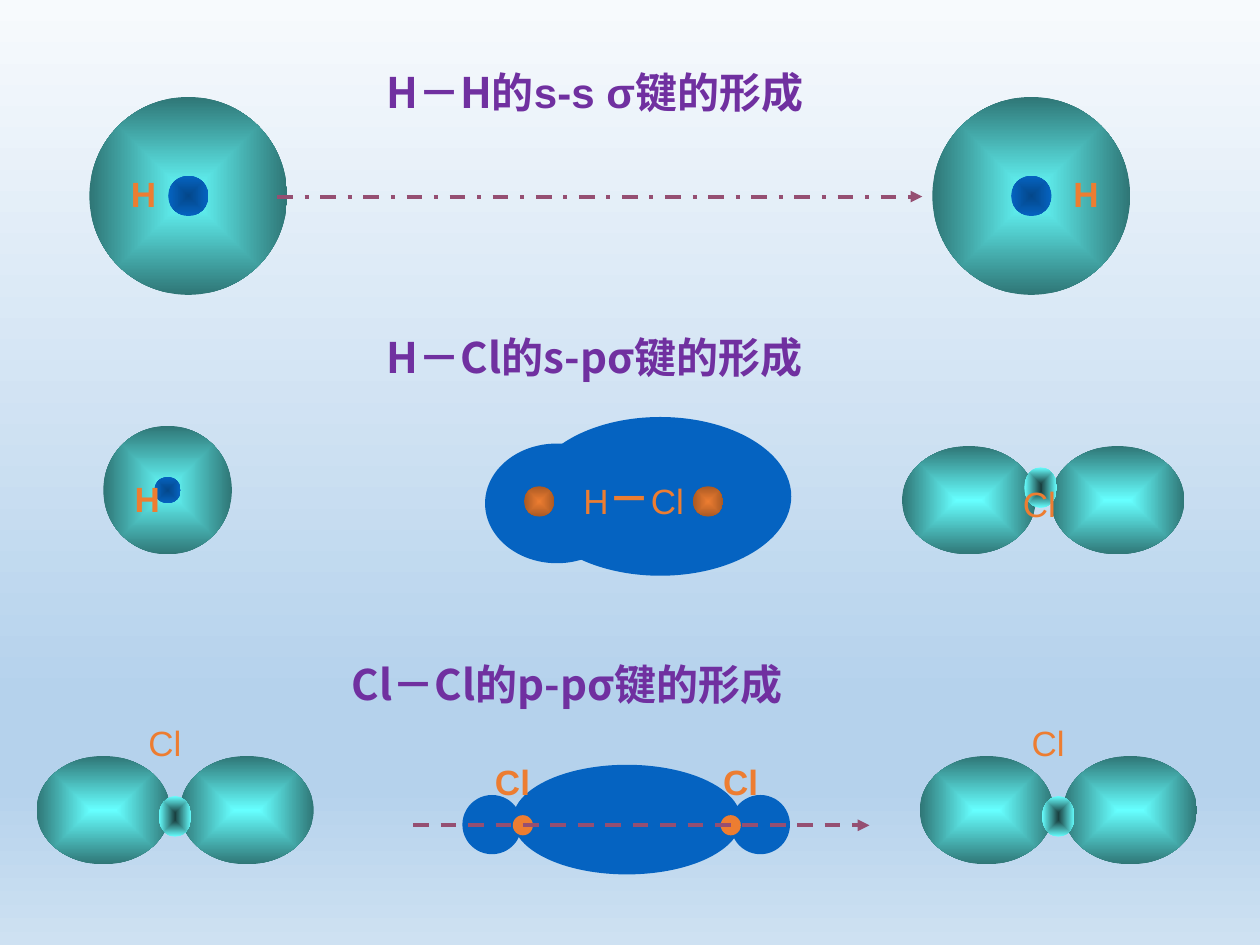
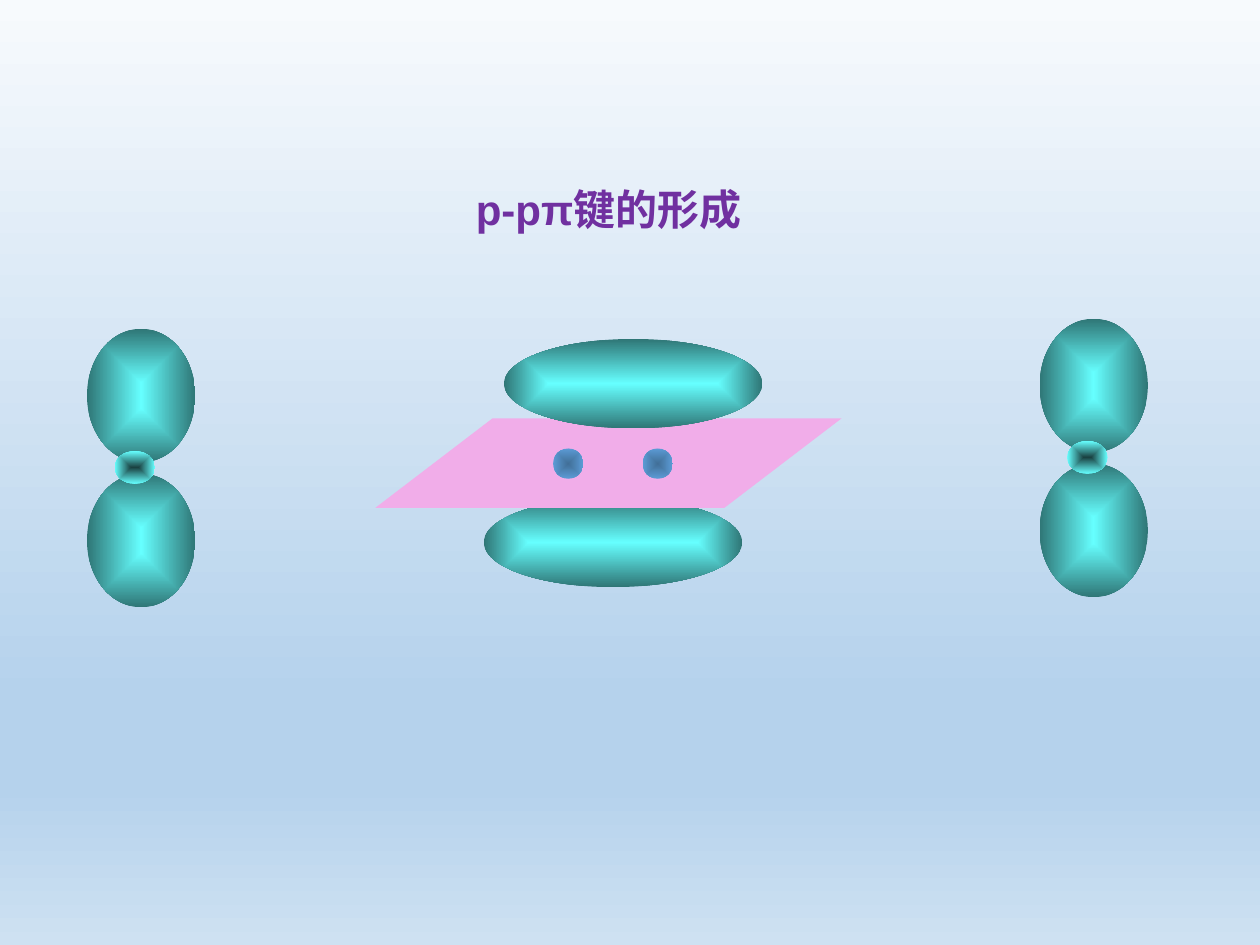
from dataclasses import dataclass
from typing import Any, Optional, Union

import lxml.etree
import pptx
import pptx.dml.color
import pptx.enum.dml
import pptx.enum.shapes
import pptx.enum.text
import pptx.oxml.ns
import pptx.util

Inches = pptx.util.Inches
Pt = pptx.util.Pt
qn = pptx.oxml.ns.qn
OVAL = pptx.enum.shapes.MSO_SHAPE.OVAL
DASH = pptx.enum.dml.MSO_LINE

# Shared colours and fonts
LATIN, CHINESE = "Arial", "Noto Sans CJK SC"
PURPLE, ORANGE, BLUE, PLUM, PINK = "7030A0", "ED7D31", "0563C1", "954F72", "F1ADE9"


@dataclass(frozen=True)
class Glow:
    """Gradient from the centre of a shape to its edge."""
    centre: str
    edge: str


CLOUD = Glow("66FFFF", "2F7676")
CORE = Glow("04478A", BLUE)
P_CORE = Glow("1A4141", "66FFFF")
HOT_CORE = Glow(ORANGE, "AA5923")
PALE_CORE = Glow("416F98", "5B9BD5")
SKY = [(0, "F7FAFD"), (74, "B5D2EC"), (83, "B5D2EC"), (100, "CEE1F2")]
Fill = Union[str, Glow]


@dataclass(frozen=True)
class Span:
    text: str
    font: str = LATIN
    size: int = 20
    bold: bool = False
    color: str = ORANGE


@dataclass(frozen=True)
class Label:
    text: str
    left: float
    top: float
    width: float = 0.53
    bold: bool = False


@dataclass(frozen=True)
class Ball:
    left: float
    top: float
    width: float
    height: float
    fill: Fill


@dataclass(frozen=True)
class SOrbital:
    left: float
    top: float
    size: float
    core: float
    label: Label


@dataclass(frozen=True)
class POrbital:
    left: float
    top: float
    lobe_step: float
    core_left: float
    core_top: float
    upright: bool = False
    label: Optional[Label] = None


@dataclass(frozen=True)
class Arrow:
    start: float
    end: float
    level: float
    dash: Any


def rgb(color: str) -> pptx.dml.color.RGBColor:
    return pptx.dml.color.RGBColor.from_string(color)


def set_stops(gradient: Any, stops: list[tuple[int, str]], angle: Optional[int] = None) -> None:
    """Rewrite a gradient: linear with an angle, otherwise spreading from the centre."""
    for child in list(gradient):
        gradient.remove(child)
    stop_list = lxml.etree.SubElement(gradient, qn("a:gsLst"))
    for position, color in stops:
        stop = lxml.etree.SubElement(stop_list, qn("a:gs"), pos=str(position * 1000))
        lxml.etree.SubElement(stop, qn("a:srgbClr"), val=color)
    if angle is not None:
        lxml.etree.SubElement(gradient, qn("a:lin"), ang=str(angle * 60000), scaled="0")
        return
    spread = lxml.etree.SubElement(gradient, qn("a:path"), {"path": "shape"})
    half = "50000"
    lxml.etree.SubElement(spread, qn("a:fillToRect"), l=half, t=half, r=half, b=half)


def add_figure(shapes: Any, ball: Ball, kind: Any = OVAL, turn: int = 0) -> Any:
    figure = shapes.add_shape(kind, Inches(ball.left), Inches(ball.top),
                              Inches(ball.width), Inches(ball.height))
    figure.rotation = turn
    figure.shadow.inherit = False
    figure.line.fill.background()
    if isinstance(ball.fill, Glow):
        figure.fill.gradient()
        set_stops(figure.element.spPr.find(qn("a:gradFill")),
                  [(0, ball.fill.centre), (100, ball.fill.edge)])
    else:
        figure.fill.solid()
        figure.fill.fore_color.rgb = rgb(ball.fill)
    return figure


def write(box: Any, spans: list[Span], centred: bool = False, side_inset: float = 0.1) -> None:
    frame = box.text_frame
    frame.word_wrap = True
    frame.auto_size = pptx.enum.text.MSO_AUTO_SIZE.NONE
    frame.vertical_anchor = pptx.enum.text.MSO_ANCHOR.TOP
    frame.margin_left = frame.margin_right = Inches(side_inset)
    frame.margin_top = frame.margin_bottom = Inches(0.05)
    para = frame.paragraphs[0]
    align = pptx.enum.text.PP_ALIGN
    para.alignment = align.CENTER if centred else align.LEFT
    for span in spans:
        run = para.add_run()
        run.text = span.text
        run.font.name = span.font
        run.font.size = Pt(span.size)
        run.font.bold = span.bold
        run.font.color.rgb = rgb(span.color)
        east_asian = lxml.etree.Element(qn("a:ea"), typeface=CHINESE)
        run.font._element.find(qn("a:latin")).addnext(east_asian)


def add_box(shapes: Any, left: float, top: float, width: float, height: float) -> Any:
    return shapes.add_textbox(Inches(left), Inches(top), Inches(width), Inches(height))


def add_label(shapes: Any, label: Label) -> None:
    box = add_box(shapes, label.left, label.top, label.width, 0.43)
    write(box, [Span(label.text, bold=label.bold)])


def heading(text: str, font: str = CHINESE) -> Span:
    return Span(text, font, 24, True, PURPLE)


def set_title(page: Any, left: float, top: float, spans: list[Span]) -> None:
    title = page.shapes.title
    title.left, title.top = Inches(left), Inches(top)
    title.width, title.height = Inches(10), Inches(0.5)
    write(title, spans, centred=True)


def add_s_orbital(page: Any, orbital: SOrbital) -> None:
    shapes = page.shapes.add_group_shape().shapes
    inset = (orbital.size - orbital.core) / 2
    add_figure(shapes, Ball(orbital.left, orbital.top, orbital.size, orbital.size, CLOUD))
    add_figure(shapes, Ball(orbital.left + inset, orbital.top + inset,
                            orbital.core, orbital.core, CORE))
    add_label(shapes, orbital.label)


def add_p_orbital(page: Any, orbital: POrbital) -> None:
    shapes = page.shapes.add_group_shape().shapes
    turn = 90 if orbital.upright else 0
    for step in (0, orbital.lobe_step):
        across, down = (0, step) if orbital.upright else (step, 0)
        add_figure(shapes, Ball(orbital.left + across, orbital.top + down,
                                1.06, 0.86, CLOUD), turn=turn)
    add_figure(shapes, Ball(orbital.left + orbital.core_left, orbital.top + orbital.core_top,
                            0.26, 0.32, P_CORE), turn=turn)
    if orbital.label:
        add_label(shapes, orbital.label)


def add_arrow(page: Any, arrow: Arrow) -> None:
    line = page.shapes.add_connector(
        pptx.enum.shapes.MSO_CONNECTOR.STRAIGHT, Inches(arrow.start), Inches(arrow.level),
        Inches(arrow.end), Inches(arrow.level))
    line.line.color.rgb = rgb(PLUM)
    line.line.width = Pt(2.25)
    line.line.dash_style = arrow.dash
    properties = line.element.spPr
    lxml.etree.SubElement(properties.find(qn("a:ln")), qn("a:tailEnd"), type="triangle")
    lxml.etree.SubElement(properties, qn("a:effectLst"))


def build_sigma_page(page: Any) -> None:
    # Headings
    set_title(page, -0.28, 0.48, [heading("H－H的"), heading("s-s σ键", LATIN), heading("的形成")])
    for left, top, text in ((0.82, 2.58, "H－Cl的s-pσ键的形成"), (0.6, 5.18, "Cl－Cl的p-pσ键的形成")):
        write(add_box(page.shapes, left, top, 7.8, 0.5), [heading(text)], centred=True)

    # Separate atoms
    for s_orbital in (
        SOrbital(0.71, 0.77, 1.57, 0.32, Label("H", 0.94, 1.32, 0.39, True)),
        SOrbital(7.4, 0.77, 1.57, 0.32, Label("H", 8.42, 1.32, 0.39, True)),
        SOrbital(0.82, 3.38, 1.02, 0.21, Label("H", 0.97, 3.74, 0.26, True)),
    ):
        add_s_orbital(page, s_orbital)
    add_p_orbital(page, POrbital(7.16, 3.54, 1.18, 0.97, 0.17, label=Label("Cl", 8.02, 3.78)))
    for left in (0.29, 7.3):
        add_p_orbital(page, POrbital(left, 6, 1.14, 0.97, 0.32,
                                     label=Label("Cl", left + 0.79, 5.68)))

    # Joined H and Cl
    shapes = page.shapes.add_group_shape().shapes
    add_figure(shapes, Ball(3.85, 3.52, 1.14, 0.95, BLUE))
    add_figure(shapes, Ball(4.2, 3.31, 2.08, 1.26, BLUE))
    write(add_box(shapes, 4.48, 3.7, 1.1, 0.5),
          [Span("H"), Span("－", size=24, bold=True), Span("Cl")], centred=True, side_inset=0)
    for left in (4.16, 5.5):
        add_figure(shapes, Ball(left, 3.86, 0.24, 0.24, HOT_CORE))

    # Joined Cl and Cl
    shapes = page.shapes.add_group_shape().shapes
    add_figure(shapes, Ball(4.07, 6.07, 1.81, 0.87, BLUE))
    for lobe, core, text in ((3.67, 4.07, 3.83), (5.8, 5.72, 5.64)):
        add_figure(shapes, Ball(lobe, 6.31, 0.47, 0.47, BLUE))
        add_label(shapes, Label("Cl", text, 5.99, 0.55, True))
        add_figure(shapes, Ball(core, 6.47, 0.16, 0.16, ORANGE))

    # Directions of approach
    add_arrow(page, Arrow(2.2, 7.32, 1.56, DASH.DASH_DOT))
    add_arrow(page, Arrow(3.28, 6.9, 6.55, DASH.DASH))


def build_pi_page(page: Any) -> None:
    set_title(page, -0.17, 1.41, [heading("p-pπ键的形成", LATIN)])

    # Separate upright orbitals
    for left, top in ((0.59, 2.71), (8.15, 2.63)):
        add_p_orbital(page, POrbital(left, top, 1.15, 0.35, 0.84, upright=True))

    # Overlap above and below the nodal plane
    shapes = page.shapes.add_group_shape().shapes
    add_figure(shapes, Ball(3.84, 3.95, 2.05, 0.71, CLOUD))
    plane = add_figure(shapes, Ball(2.98, 3.32, 3.7, 0.71, PINK),
                       pptx.enum.shapes.MSO_SHAPE.PARALLELOGRAM)
    plane.adjustments[0] = 1.31
    add_figure(shapes, Ball(4, 2.69, 2.05, 0.71, CLOUD))
    for left in (4.39, 5.1):
        add_figure(shapes, Ball(left, 3.56, 0.24, 0.24, PALE_CORE))


def main() -> None:
    deck = pptx.Presentation()
    deck.slide_width, deck.slide_height = Inches(10), Inches(7.5)

    # Shared background
    master = deck.slide_master
    master.background.fill.gradient()
    set_stops(master.element.find(".//" + qn("a:gradFill")), SKY, angle=90)

    title_only = deck.slide_layouts[5]
    for build in (build_sigma_page, build_pi_page):
        build(deck.slides.add_slide(title_only))
    deck.save("out.pptx")


if __name__ == "__main__":
    main()
